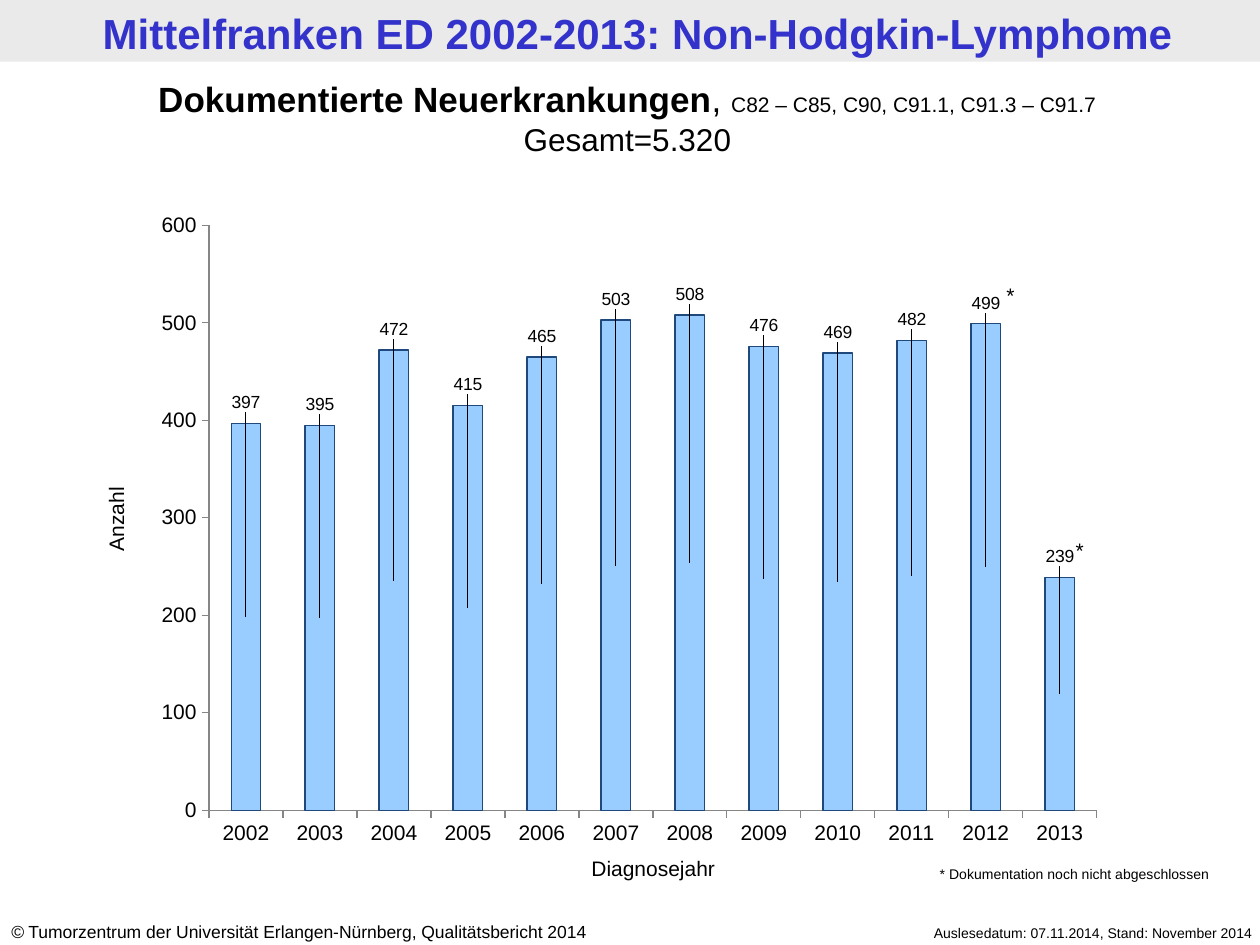
"""Build a slide with a column chart of documented new lymphoma cases per year."""
from lxml.etree import SubElement as Sub
from pptx import Presentation
from pptx.chart.data import CategoryChartData as Data
from pptx.dml.color import RGBColor as RGB
from pptx.enum.chart import XL_CHART_TYPE as Kind, XL_TICK_MARK as Tick
from pptx.enum.shapes import MSO_SHAPE as Shape
from pptx.enum.text import MSO_AUTO_SIZE as Fit, PP_ALIGN as Align
from pptx.oxml.ns import qn
from pptx.oxml.xmlchemy import OxmlElement as Node
from pptx.util import Pt

FONT = "Arial"
HUE = {"band": "EAEAEA", "title": "3333CC", "text": "000000",
       "bar": "99CCFF", "edge": "1F497D", "axis": "868686"}
LEFT, MID, RIGHT = Align.LEFT, Align.CENTER, Align.RIGHT

CASES = {2002: 397, 2003: 395, 2004: 472, 2005: 415, 2006: 465, 2007: 503,
         2008: 508, 2009: 476, 2010: 469, 2011: 482, 2012: 499, 2013: 239}
TOP, STEP = 600, 100
AREA = (82.8, 118.1, 555.1, 370.1)
PLOT = {"x": 0.066, "y": 0.029, "w": 0.914, "h": 0.903}
RISE = 0.032

TITLE = "Mittelfranken ED 2002-2013: Non-Hodgkin-Lymphome"
HEAD = [[("Dokumentierte Neuerkrankungen", 20, "b"), (", ", 20, ""),
         ("C82 – C85, C90, C91.1, C91.3 – C91.7", 12, "")],
        [("Gesamt=5.320", 18, "")]]
OWNER = [("©", 10, "i"),
         (" Tumorzentrum der Universität Erlangen-Nürnberg, Qualitätsbericht 2014", 10, "")]
NOTES = [
    ((4.3, 0.7, 720, 35.3), MID, "title", 0, [[(TITLE, 24, "b")]]),
    ((478.8, 524.9, 244.1, 17.3), RIGHT, "text", 0,
     [[("Auslesedatum: 07.11.2014, Stand: November 2014", 8, "")]]),
    ((-0.7, 522.7, 377.3, 19.4), LEFT, "text", 0, [OWNER]),
    ((-2.9, 41, 722.9, 53.3), MID, "text", 0, HEAD),
    ((292.3, 485.3, 162, 21.6), MID, "text", 0, [[("Diagnosejahr", 12, "")]]),
    ((22.3, 285.8, 87.8, 21.6), MID, "text", 270, [[("Anzahl", 12, "")]]),
    ((558.7, 157.7, 28.1, 21.6), RIGHT, "text", 0, [[("*", 12, "")]]),
    ((598.3, 303.8, 28.1, 21.6), RIGHT, "text", 0, [[("*", 12, "")]]),
    ((529.9, 491, 178.6, 17.3), LEFT, "text", 0,
     [[("* Dokumentation noch nicht abgeschlossen", 8, "")]]),
]


def tint(name):
    return RGB.from_string(HUE[name])


def place(box):
    return [Pt(n) for n in box]


def style(font, size, hue="text"):
    font.name, font.size = FONT, Pt(size)
    font.color.rgb = tint(hue)


def note(slide, box, align, hue, turn, lines):
    shape = slide.shapes.add_textbox(*place(box))
    shape.rotation = turn
    frame = shape.text_frame
    frame.word_wrap, frame.auto_size = True, Fit.SHAPE_TO_FIT_TEXT
    for i, line in enumerate(lines):
        para = frame.add_paragraph() if i else frame.paragraphs[0]
        para.alignment = align
        style(para.font, line[0][1], hue)
        for text, size, look in line:
            run = para.add_run()
            run.text = text
            style(run.font, size, hue)
            run.font.bold, run.font.italic = look == "b", look == "i"


def layout(**vals):
    node = Node("c:layout")
    man = Sub(node, qn("c:manualLayout"))
    for key, val in vals.items():
        Sub(man, qn("c:" + key)).set("val", str(val))
    return node


def graph(slide):
    data = Data()
    data.categories = [str(year) for year in CASES]
    data.add_series("Series 1", list(CASES.values()))
    chart = slide.shapes.add_chart(Kind.COLUMN_STACKED, *place(AREA), data).chart
    chart.has_legend = chart.has_title = False
    style(chart.font, 12)
    cat, val = chart.category_axis, chart.value_axis
    for axis in (cat, val):
        axis.major_tick_mark, axis.minor_tick_mark = Tick.OUTSIDE, Tick.NONE
        axis.has_major_gridlines = False
        axis.format.line.color.rgb = tint("axis")
    val.minimum_scale, val.maximum_scale, val.major_unit = 0, TOP, STEP

    area = chart._chartSpace.chart.plotArea
    for old in area.findall(qn("c:layout")):
        area.remove(old)
    area.insert(0, layout(layoutTarget="inner", xMode="edge", yMode="edge", **PLOT))

    plot = chart.plots[0]
    plot.gap_width, plot.overlap, plot.vary_by_categories = 150, 100, False
    bars = plot.series[0]
    bars.format.fill.solid()
    bars.format.fill.fore_color.rgb = tint("bar")
    bars.format.line.color.rgb = tint("edge")
    bars.format.line.width = Pt(0.75)
    tags = bars.data_labels
    tags.show_value = True
    style(tags.font, 10)
    for i in range(len(CASES)):
        style(bars.points[i].data_label.font, 10)
    for tag, count in zip(bars._element.iter(qn("c:dLbl")), CASES.values()):
        lift = count / TOP * PLOT["h"] / 2 + RISE
        tag.insert(1, layout(x=0, y=round(-lift, 4)))


def main():
    deck = Presentation()
    deck.slide_width, deck.slide_height = Pt(720), Pt(540)
    slide = deck.slides.add_slide(deck.slide_layouts[6])
    band = slide.shapes.add_shape(Shape.RECTANGLE, *place((0, 0, 720, 35.3)))
    band.shadow.inherit = False
    band.fill.solid()
    band.fill.fore_color.rgb = tint("band")
    band.line.fill.background()
    graph(slide)
    for item in NOTES:
        note(slide, *item)
    deck.save("out.pptx")


if __name__ == "__main__":
    main()
